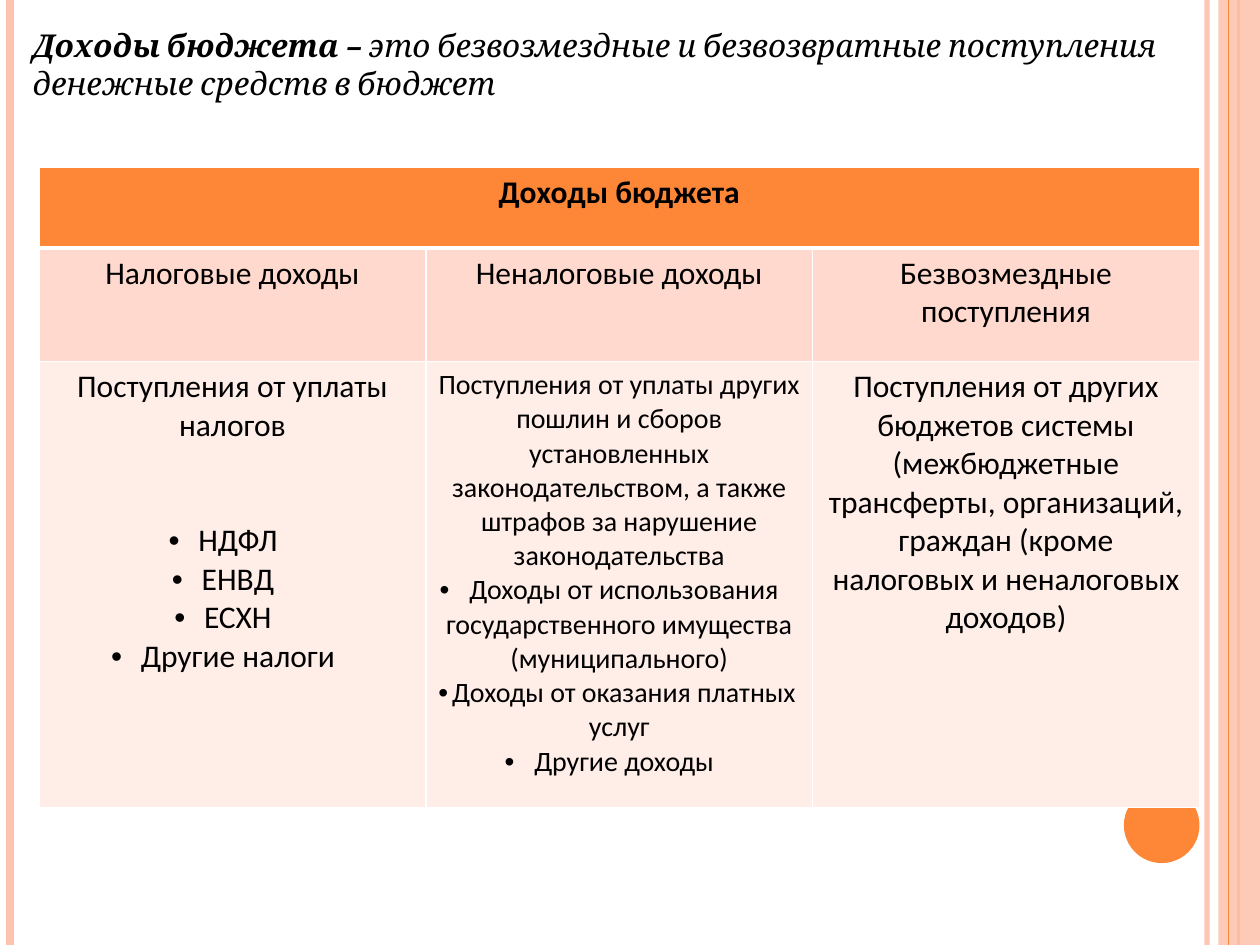
from lxml.etree import SubElement
from pptx import Presentation
from pptx.dml.color import RGBColor
from pptx.enum.shapes import MSO_CONNECTOR, MSO_SHAPE
from pptx.enum.text import MSO_ANCHOR, MSO_AUTO_SIZE, PP_ALIGN
from pptx.oxml.ns import qn
from pptx.util import Inches, Pt

COLORS = {
    "text": "000000",
    "border": "FFFFFF",
    "accent": "FE8637",
    "stripe": "FEC3AE",
    "group": "FFD9CE",
    "detail": "FFEDE8",
}
SLIDE_WIDTH, SLIDE_HEIGHT = 10, 7.5

# Each paragraph is (text, size, bulleted, space before)
TAXES = [("Поступления от уплаты налогов", 18, False, 0)] + [
    (name, 18, True, 44 if index == 0 else 0)
    for index, name in enumerate(["НДФЛ", "ЕНВД", "ЕСХН", "Другие налоги"])
]
NON_TAXES = [(
    "Поступления от уплаты других пошлин и сборов установленных "
    "законодательством, а также штрафов за нарушение законодательства",
    16, False, 0,
)] + [
    (name, 16, True, 0)
    for name in [
        "Доходы от использования государственного имущества (муниципального)",
        "Доходы от оказания платных услуг",
        "Другие доходы",
    ]
]
TRANSFERS = [(
    "Поступления от других бюджетов системы (межбюджетные трансферты, "
    "организаций, граждан (кроме налоговых и неналоговых доходов)",
    18, False, 0,
)]
GROUPS = ["Налоговые доходы", "Неналоговые доходы", "Безвозмездные поступления"]


class SlideBuilder:
    def __init__(self, page):
        self.page = page

    def color(self, name):
        return RGBColor.from_string(COLORS[name])

    def set_opacity(self, fill_owner, percent):
        """Add an alpha value to the solid colour of a shape fill or a line."""
        srgb = next(fill_owner.iter(qn("a:srgbClr")))
        SubElement(srgb, qn("a:alpha")).set("val", str(percent * 1000))

    def vertical_line(self, x, color, width, opacity=100):
        line = self.page.shapes.add_connector(
            MSO_CONNECTOR.STRAIGHT, Inches(x), 0, Inches(x), Inches(SLIDE_HEIGHT))
        line.line.color.rgb = self.color(color)
        line.line.width = Pt(width)
        properties = line._element.spPr
        SubElement(properties, qn("a:effectLst"))
        if opacity < 100:
            self.set_opacity(properties, opacity)

    def shape(self, kind, left, top, width, height, color, opacity=100):
        shape = self.page.shapes.add_shape(
            kind, Inches(left), Inches(top), Inches(width), Inches(height))
        shape.shadow.inherit = False
        shape.fill.solid()
        shape.fill.fore_color.rgb = self.color(color)
        shape.line.fill.background()
        if opacity < 100:
            self.set_opacity(shape._element.spPr, opacity)

    def span(self, para, text, size, font, bold=False, italic=False):
        span = para.add_run()
        span.text = text
        span.font.size = Pt(size)
        span.font.name = font
        span.font.bold = bold
        span.font.italic = italic
        span.font.color.rgb = self.color("text")

    def title(self, left, top, width, height, term, definition):
        box = self.page.shapes.title
        box.left, box.top = Inches(left), Inches(top)
        box.width, box.height = Inches(width), Inches(height)
        frame = box.text_frame
        frame.word_wrap = True
        frame.auto_size = MSO_AUTO_SIZE.NONE
        frame.vertical_anchor = MSO_ANCHOR.TOP
        para = frame.paragraphs[0]
        para.alignment = PP_ALIGN.LEFT
        self.span(para, term, 18, "Cambria", bold=True, italic=True)
        self.span(para, definition, 18, "Cambria", italic=True)

    def table(self, left, top, column_widths, row_heights):
        frame = self.page.shapes.add_table(
            len(row_heights), len(column_widths), Inches(left), Inches(top),
            Inches(sum(column_widths)), Inches(sum(row_heights)))
        table = frame.table
        table.first_row = table.horz_banding = False
        for column, width in zip(table.columns, column_widths):
            column.width = Inches(width)
        for row, height in zip(table.rows, row_heights):
            row.height = Inches(height)
        return table

    def borders(self, cell, **widths):
        properties = cell._tc.get_or_add_tcPr()
        for index, side in enumerate("LRTB"):
            line = properties.makeelement(
                qn(f"a:ln{side}"), {"w": str(Pt(widths.get(side, 1)))})
            fill = SubElement(line, qn("a:solidFill"))
            SubElement(fill, qn("a:srgbClr")).set("val", COLORS["border"])
            properties.insert(index, line)

    def cell(self, cell, paragraphs, fill, bold=False, **border_widths):
        cell.fill.solid()
        cell.fill.fore_color.rgb = self.color(fill)
        self.borders(cell, **border_widths)
        frame = cell.text_frame
        for index, (text, size, bulleted, space) in enumerate(paragraphs):
            para = frame.add_paragraph() if index else frame.paragraphs[0]
            para.alignment = PP_ALIGN.CENTER
            if space:
                para.space_before = Pt(space)
            if bulleted:
                properties = para._p.get_or_add_pPr()
                SubElement(properties, qn("a:buFont")).set("typeface", "Arial")
                SubElement(properties, qn("a:buChar")).set("char", "•")
            self.span(para, text, size, "Calibri", bold=bold)


def main():
    deck = Presentation()
    deck.slide_width, deck.slide_height = Inches(SLIDE_WIDTH), Inches(SLIDE_HEIGHT)
    builder = SlideBuilder(deck.slides.add_slide(deck.slide_layouts[5]))

    builder.vertical_line(9.58, "stripe", 3, opacity=93)
    builder.vertical_line(0.08, "stripe", 4.5)
    builder.vertical_line(9.83, "accent", 1.5)
    builder.shape(MSO_SHAPE.RECTANGLE, 9.67, 0, 0.33, SLIDE_HEIGHT, "stripe", opacity=87)
    builder.vertical_line(9.75, "accent", 0.75)
    builder.shape(MSO_SHAPE.OVAL, 8.92, 6.25, 0.6, 0.6, "accent")

    builder.title(
        0.16, 0.16, 9.61, 1.01, "Доходы бюджета – ",
        "это безвозмездные и безвозвратные поступления денежные средств в бюджет")

    table = builder.table(0.31, 1.33, [3.07] * 3, [0.64, 0.9, 3.54])
    table.cell(0, 0).merge(table.cell(0, 2))
    builder.cell(table.cell(0, 0), [("Доходы бюджета", 18, False, 0)],
                 "accent", bold=True, B=3)
    for column, (group, details) in enumerate(zip(GROUPS, [TAXES, NON_TAXES, TRANSFERS])):
        builder.cell(table.cell(1, column), [(group, 18, False, 0)], "group", T=3)
        builder.cell(table.cell(2, column), details, "detail")

    deck.save("out.pptx")


if __name__ == "__main__":
    main()
